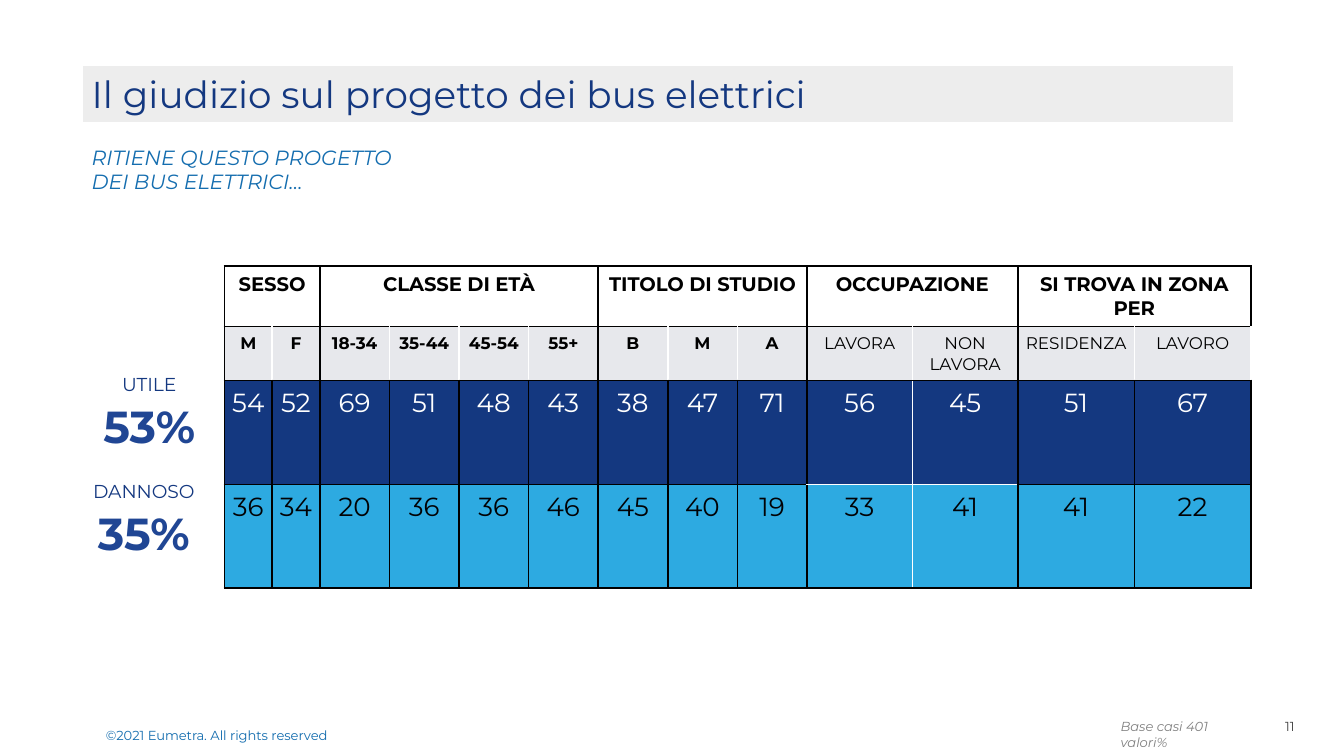
from dataclasses import dataclass
from itertools import accumulate

from lxml import etree
from pptx import Presentation
from pptx import util as u
from pptx.dml.color import RGBColor
from pptx.enum import shapes, text
from pptx.oxml import ns


@dataclass(frozen=True)
class Theme:
    font: str = "Montserrat"
    navy: str = "143880"
    royal: str = "204694"
    blue: str = "146DAF"
    sky: str = "2DAAE1"
    band: str = "EDEDED"
    head: str = "E7E8EC"
    ink: str = "010205"
    black: str = "000000"
    white: str = "FFFFFF"
    dark: str = "404040"
    grey: str = "808080"
    title: float = 20
    figure: float = 24
    value: float = 14
    question: float = 11
    group: float = 10.5
    label: float = 10
    column: float = 9
    small: float = 7
    rule: float = 0.96
    hairline: float = 0.5


T = Theme()
UNIT = u.Inches(0.1)
COLS, ROWS = 100, 56.25
LEFT, CENTER, RIGHT = text.PP_ALIGN.LEFT, text.PP_ALIGN.CENTER, text.PP_ALIGN.RIGHT

GROUPS = [
    ("SESSO", ["M", "F"], 3.55),
    ("CLASSE DI ETÀ", ["18-34", "35-44", "45-54", "55+"], 5.18),
    ("TITOLO DI STUDIO", ["B", "M", "A"], 5.18),
    ("OCCUPAZIONE", ["LAVORA", "NON LAVORA"], 7.85),
    ("SI TROVA IN ZONA PER", ["RESIDENZA", "LAVORO"], 8.67),
]
USEFUL = [54, 52, 69, 51, 48, 43, 38, 47, 71, 56, 45, 51, 67]
HARMFUL = [36, 34, 20, 36, 36, 46, 45, 40, 19, 33, 41, 41, 22]
ROW_HEIGHTS = [3.6, 3.1, 7.73, 7.73]
JOB_COLS = (9, 10)


def grid(*cells):
    return [round(c * UNIT) for c in cells]


def rgb(value):
    return RGBColor.from_string(value)


def write(p, content, size, color, bold=False, italic=False, align=LEFT, spacing=None):
    p.text = content
    p.alignment = align
    if spacing:
        p.line_spacing = spacing
    for r in p.runs:
        f = r.font
        f.name, f.size, f.bold, f.italic = T.font, u.Pt(size), bold, italic
        f.color.rgb = rgb(color)


def text_frame(slide, box, wrap=True, pad=0.5):
    tf = slide.shapes.add_textbox(*grid(*box)).text_frame
    tf.word_wrap = wrap
    if not wrap:
        tf.auto_size = text.MSO_AUTO_SIZE.SHAPE_TO_FIT_TEXT
    tf.margin_top = tf.margin_bottom = grid(pad)[0]
    return tf


def title_band(slide, box):
    s = slide.shapes.add_shape(shapes.MSO_SHAPE.RECTANGLE, *grid(*box))
    s.shadow.inherit = False
    s.fill.solid()
    s.fill.fore_color.rgb = rgb(T.band)
    s.line.color.rgb = rgb(T.white)
    s.line.width = u.Pt(4.5)
    s.text_frame.vertical_anchor = text.MSO_ANCHOR.MIDDLE
    s.text_frame.word_wrap = True
    write(s.text_frame.paragraphs[0], "Il giudizio sul progetto dei bus elettrici", T.title, T.navy)


def question(slide, box):
    tf = text_frame(slide, box)
    write(tf.paragraphs[0], "RITIENE QUESTO PROGETTO DEI BUS ELETTRICI…",
          T.question, T.blue, italic=True)


def verdict(slide, box, name, share):
    tf = text_frame(slide, box)
    write(tf.paragraphs[0], name, T.label, T.navy, align=CENTER, spacing=1.07)
    write(tf.add_paragraph(), share, T.figure, T.royal, bold=True, align=CENTER, spacing=1.07)


def set_borders(cell, sides):
    tc_pr = cell._tc.get_or_add_tcPr()
    for i, side in enumerate("LRTB"):
        color, width = sides.get(side, (T.black, T.rule))
        ln = etree.Element(ns.qn(f"a:ln{side}"), w=str(u.Pt(width)))
        fill = etree.SubElement(ln, ns.qn("a:solidFill"))
        etree.SubElement(fill, ns.qn("a:srgbClr"), val=color)
        tc_pr.insert(i, ln)


def border_sides(row, col, starts, ends):
    sides = {}
    thin = (T.white, T.hairline)
    inner = thin if col in JOB_COLS else (T.white, T.rule)
    if row == 1 or (row > 1 and col in JOB_COLS):
        if col not in starts:
            sides["L"] = inner
        if col not in ends:
            sides["R"] = inner
    if row == 1 and col == ends[-1]:
        sides["R"] = inner
    if col in JOB_COLS and row in (2, 3):
        sides["B" if row == 2 else "T"] = thin
    return sides


def result_table(slide, box):
    widths = [w for _, names, w in GROUPS for _ in names]
    names = [n for _, group, _ in GROUPS for n in group]
    stops = list(accumulate(len(group) for _, group, _ in GROUPS))
    starts, ends = [0] + stops[:-1], [s - 1 for s in stops]
    titles = [""] * len(names)
    for start, (title, _, _) in zip(starts, GROUPS):
        titles[start] = title
    styles = [(titles, T.group, T.black, None), (names, T.column, T.black, T.head),
              (USEFUL, T.value, T.white, T.navy), (HARMFUL, T.value, T.ink, T.sky)]

    table = slide.shapes.add_table(len(styles), len(names), *grid(*box)).table
    table.first_row = table.horz_banding = False
    for col, width in zip(table.columns, grid(*widths)):
        col.width = width
    for row, height in zip(table.rows, grid(*ROW_HEIGHTS)):
        row.height = height

    for i, (values, size, color, fill) in enumerate(styles):
        for j, value in enumerate(values):
            cell = table.cell(i, j)
            cell.margin_left = cell.margin_right = u.Inches(0.01)
            cell.margin_top = cell.margin_bottom = u.Inches(0.05)
            bold = i == 0 or (i == 1 and j < JOB_COLS[0])
            write(cell.text_frame.paragraphs[0], str(value), size, color, bold=bold, align=CENTER)
            if fill:
                cell.fill.solid()
                cell.fill.fore_color.rgb = rgb(fill)
            else:
                cell.fill.background()
            set_borders(cell, border_sides(i, j, starts, ends))
    for start, end in zip(starts, ends):
        table.cell(0, start).merge(table.cell(0, end))


def footer(slide, box):
    x, y, w, h = box
    rights = text_frame(slide, (x, y, w / 2, h), pad=1)
    rights.vertical_anchor = text.MSO_ANCHOR.BOTTOM
    write(rights.paragraphs[0], "©2021 Eumetra. All rights reserved", T.small, T.blue, spacing=1.15)
    number = text_frame(slide, (x + w - 9.4, y + 0.75, 9.4, 2.2))
    write(number.paragraphs[0], "11", T.small, T.dark, align=RIGHT)
    base = text_frame(slide, (x + w - 14.9, y + 0.8, 10.7, 2.2), wrap=False)
    write(base.paragraphs[0], "Base casi 401 valori%", T.small, T.grey, italic=True)


def main():
    prs = Presentation()
    prs.slide_width, prs.slide_height = grid(COLS, ROWS)
    slide = prs.slides.add_slide(prs.slide_layouts[6])
    footer(slide, (6.9, 52.2, 90.4, 3.8))
    result_table(slide, (16.7, 19.8, 76.4, sum(ROW_HEIGHTS)))
    verdict(slide, (0.4, 27.1, 21.4, 6.9), "UTILE", "53%")
    verdict(slide, (0, 35.1, 21.4, 6.9), "DANNOSO", "35%")
    title_band(slide, (5.84, 4.57, 86.2, 4.8))
    question(slide, (5.84, 10.27, 26.4, 3))
    prs.save("out.pptx")


if __name__ == "__main__":
    main()
